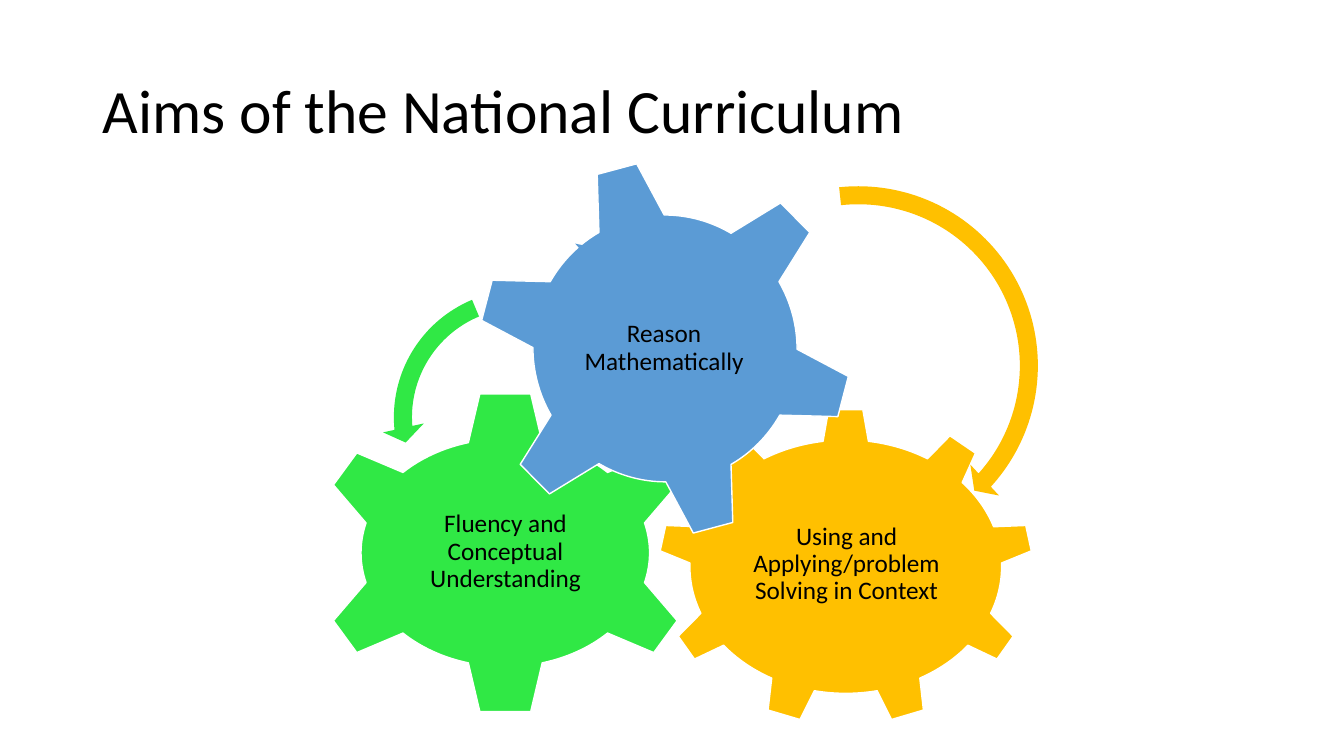
"""Build a slide of three meshing gears for the aims of the curriculum."""
from pptx import Presentation as Deck
from pptx.dml.color import RGBColor as Color
from pptx.enum.shapes import MSO_SHAPE as Kind
from pptx.enum.text import MSO_ANCHOR as Anchor, PP_ALIGN as Align
from pptx.util import Cm, Pt

HUES = {"ink": "000000", "edge": "FFFFFF", "gold": "FFC000",
        "green": "30E845", "blue": "5B9BD5"}


def write(frame, text, size=18, align=Align.CENTER, hue="ink", font="Calibri"):
    frame.word_wrap = True
    frame.vertical_anchor = Anchor.MIDDLE
    para = frame.paragraphs[0]
    para.text = text
    para.alignment = align
    para.line_spacing = 0.9
    face = para.font
    face.name, face.size = font, Pt(size)
    face.color.rgb = Color.from_string(HUES[hue])


class Slide:
    def __init__(self, deck):
        self.shapes = deck.slides.add_slide(deck.slide_layouts[6]).shapes

    def label(self, box, text, inset=None, **style):
        frame = self.shapes.add_textbox(*map(Cm, box)).text_frame
        if inset is not None:
            frame.margin_left = frame.margin_right = Cm(inset)
            frame.margin_top = frame.margin_bottom = Cm(inset)
        write(frame, text, **style)

    def shape(self, kind, box, hue):
        item = self.shapes.add_shape(kind, *map(Cm, box))
        item.shadow.inherit = False
        item.fill.solid()
        item.fill.fore_color.rgb = Color.from_string(HUES[hue])
        return item

    def gear(self, kind, box, hue, area, text, turn=0):
        item = self.shape(kind, box, hue)
        item.rotation = turn
        item.line.color.rgb = Color.from_string(HUES["edge"])
        item.line.width = Pt(1)
        self.label(area, text, inset=0.08)

    def arrow(self, kind, left, top, size, hue, width, head, angles):
        item = self.shape(kind, (left, top, size, size), hue)
        item.line.fill.background()
        turns = [angle * 0.6 for angle in angles]
        for at, value in enumerate([width / 100, *turns, head / 100]):
            item.adjustments[at] = value


def main():
    deck = Deck()
    deck.slide_width, deck.slide_height = Cm(33.87), Cm(19.05)
    page = Slide(deck)
    page.label((2.34, 1.02, 29.21, 3.68), "Aims of the National Curriculum",
               size=44, align=Align.LEFT)

    page.gear(Kind.GEAR_9, (16.59, 10.29, 9.45, 7.98), "gold",
              (18.39, 12.17, 5.89, 4.09),
              "Using and Applying/problem Solving in Context")
    page.gear(Kind.GEAR_6, (7.87, 9.83, 9.73, 8.2), "green",
              (10.16, 11.89, 5.16, 4.04),
              "Fluency and Conceptual Understanding")
    page.gear(Kind.GEAR_6, (12.01, 3.99, 9.5, 9.58), "blue",
              (14.07, 6.1, 5.33, 5.36), "Reason Mathematically", turn=345)

    page.arrow(Kind.CIRCULAR_ARROW, 16.81, 4.39, 9.65, "gold",
               4.7, 5.5, (4.98, 42.19, 263.82))
    page.arrow(Kind.LEFT_CIRCULAR_ARROW, 9.63, 7.01, 7.01, "green",
               6.5, 7.5, (7.17, 174.82, 247.3))
    page.arrow(Kind.CIRCULAR_ARROW, 13.49, 4.93, 7.54, "blue",
               6, 7, (6.57, 221.9, 175.14))
    deck.save("out.pptx")


if __name__ == "__main__":
    main()
